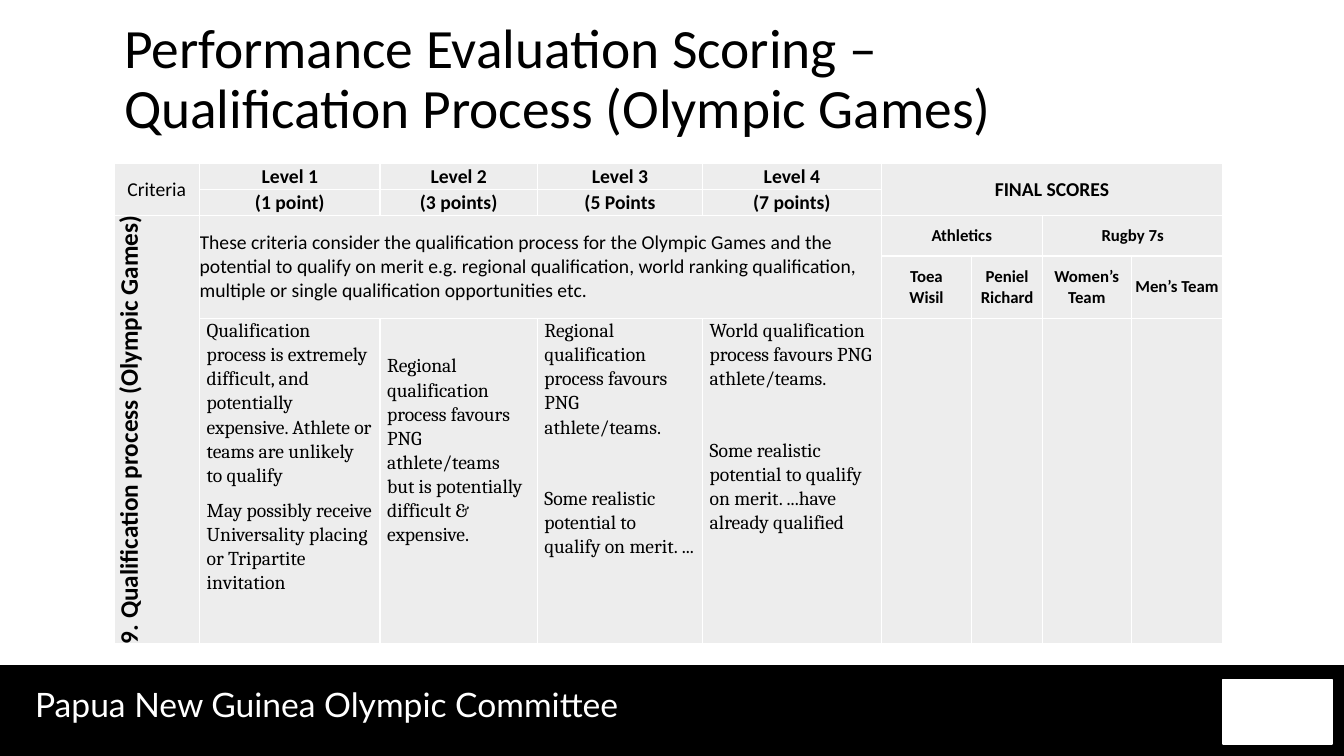
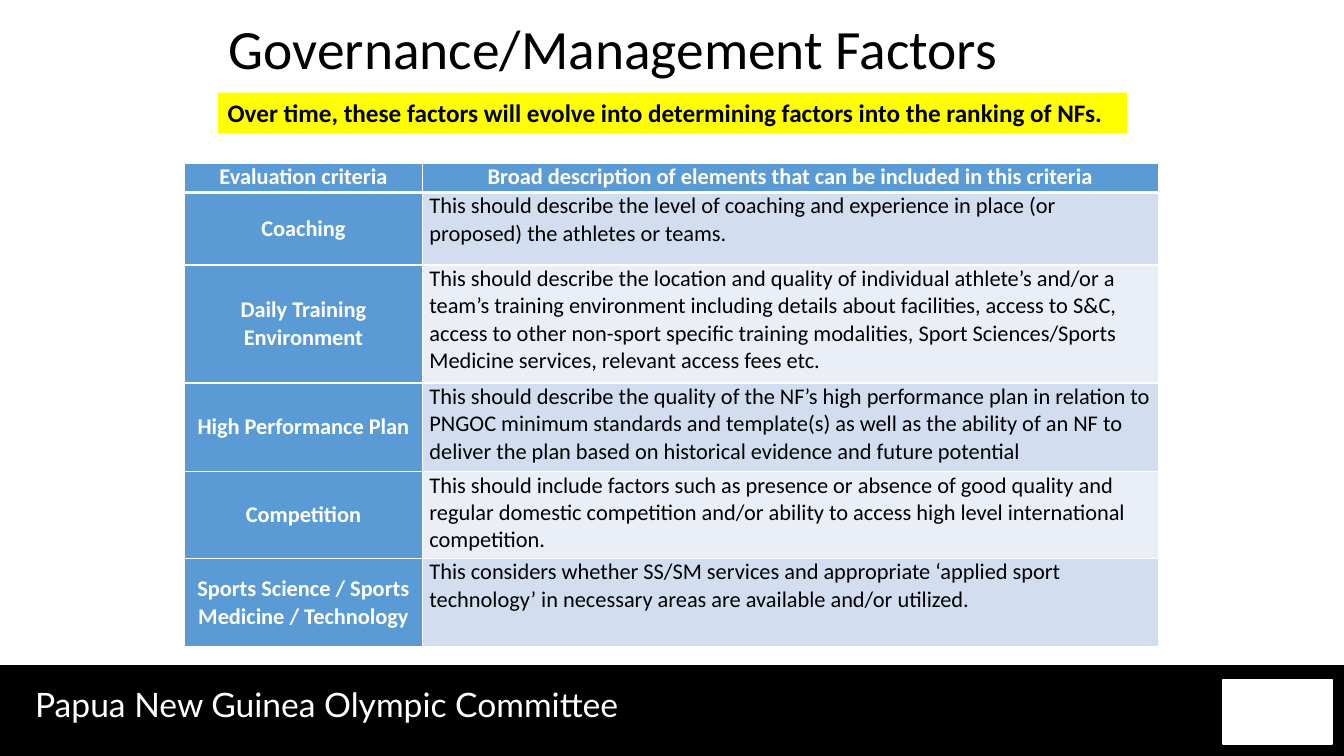
from lxml import etree
from pptx import Presentation
from pptx.dml.color import RGBColor
from pptx.enum import shapes, text
from pptx.oxml.ns import qn
from pptx.util import Inches, Pt

COLOURS = {
    "black": "000000", "white": "FFFFFF", "grey": "EDEDED", "yellow": "FFFF00",
    "blue": "5B9BD5", "band": "D2DEEF", "light band": "EAEFF7",
}
CENTRE, LEFT = text.PP_ALIGN.CENTER, text.PP_ALIGN.LEFT
MIDDLE, TOP = text.MSO_ANCHOR.MIDDLE, text.MSO_ANCHOR.TOP
TITLE_ONLY = 5
TABLE_TOP = 1.62

SCORE_COLUMNS = [0.85, 1.79, 1.56, 1.64, 1.77, 0.9, 0.7, 0.88, 0.91]
SCORE_ROWS = [0.26, 0.26, 0.4, 0.62, 3.22]
# Heading, points, paragraphs, top margin in inches, gap between paragraphs in points
LEVELS = [
    ("Level 1", "(1 point)",
     ["Qualification process is extremely difficult, and potentially expensive. "
      "Athlete or teams are unlikely to qualify",
      "May possibly receive Universality placing or Tripartite invitation"], 0, 8),
    ("Level 2", "(3 points)",
     ["Regional qualification process favours PNG athlete/teams but is "
      "potentially difficult & expensive."], 0.35, 0),
    ("Level 3", "(5 Points",
     ["Regional qualification process favours PNG athlete/teams.",
      "Some realistic potential to qualify on merit. ..."], 0, 34),
    ("Level 4", "(7 points)",
     ["World qualification process favours PNG athlete/teams.",
      "Some realistic potential to qualify on merit. ...have already qualified"], 0, 34),
]
CONSIDERATION = (
    "These criteria consider the qualification process for the Olympic Games and the "
    "potential to qualify on merit e.g. regional qualification, world ranking "
    "qualification, multiple or single qualification opportunities etc.")
ENTRANTS = [["Toea", "Wisil"], ["Peniel", "Richard"], ["Women’s Team"], ["Men’s Team"]]

FACTOR_COLUMNS = [2.36, 7.3]
FACTOR_ROWS = [0.29, 0.72, 1.17, 0.88, 0.86, 0.88]
FACTOR_HEADINGS = ["Evaluation criteria",
                   "Broad description of elements that can be included in this criteria"]
FACTORS = [
    ("Coaching",
     "This should describe the level of coaching and experience in place (or proposed) "
     "the athletes or teams."),
    ("Daily Training Environment",
     "This should describe the location and quality of individual athlete’s and/or a "
     "team’s training environment including details about facilities, access to S&C, "
     "access to other non-sport specific training modalities, Sport Sciences/Sports "
     "Medicine services, relevant access fees etc."),
    ("High Performance Plan",
     "This should describe the quality of the NF’s high performance plan in relation to "
     "PNGOC minimum standards and template(s) as well as the ability of an NF to deliver "
     "the plan based on historical evidence and future potential"),
    ("Competition",
     "This should include factors such as presence or absence of good quality and regular "
     "domestic competition and/or ability to access high level international competition."),
    ("Sports Science / Sports Medicine / Technology",
     "This considers whether SS/SM services and appropriate ‘applied sport technology’ in "
     "necessary areas are available and/or utilized."),
]


def colour(name):
    return RGBColor.from_string(COLOURS[name])


def set_font(paragraph, size, name="Calibri", ink="black", bold=False):
    font = paragraph.font
    font.name, font.size, font.bold = name, Pt(size), bold
    font.color.rgb = colour(ink)


def place(shape, left, top, width, height):
    shape.left, shape.top = Inches(left), Inches(top)
    shape.width, shape.height = Inches(width), Inches(height)


def add_rectangle(slide, left, top, width, height, fill, outlined=True):
    shape = slide.shapes.add_shape(
        shapes.MSO_SHAPE.RECTANGLE, *map(Inches, (left, top, width, height)))
    shape.shadow.inherit = False
    shape.fill.solid()
    shape.fill.fore_color.rgb = colour(fill)
    if outlined:
        shape.line.color.rgb = colour(fill)
        shape.line.width = Pt(1)
    else:
        shape.line.fill.background()
    return shape


def add_footer(slide):
    """Draw the footer and hand it to the layout, so that every slide shows it."""
    band = add_rectangle(slide, 0, 6.6, 13.33, 0.9, "black")
    label = slide.shapes.add_textbox(*map(Inches, (0.25, 6.74, 6.55, 0.5)))
    label.text_frame.word_wrap = True
    label.text_frame.text = "Papua New Guinea Olympic Committee"
    set_font(label.text_frame.paragraphs[0], 24, "Lato", "white")
    emblem = add_rectangle(slide, 12.13, 6.74, 1.08, 0.64, "white")
    for number, shape in enumerate((band, label, emblem), start=101):
        shape.element.xpath(".//p:cNvPr")[0].set("id", str(number))
        slide.slide_layout.shapes.element.append(shape.element)


def add_title(slide, wording, left, top, width, height):
    title = slide.shapes.title
    place(title, left, top, width, height)
    frame = title.text_frame
    frame.text = wording
    frame.word_wrap = True
    frame.auto_size = text.MSO_AUTO_SIZE.NONE
    frame.vertical_anchor = MIDDLE
    paragraph = frame.paragraphs[0]
    paragraph.alignment, paragraph.line_spacing = LEFT, 0.9
    set_font(paragraph, 39.6)


def set_borders(cell, bottom=1):
    properties = cell._tc.get_or_add_tcPr()
    for side, points in (("L", 1), ("R", 1), ("T", 1), ("B", bottom)):
        line = etree.SubElement(properties, qn(f"a:ln{side}"), w=str(Pt(points)))
        solid = etree.SubElement(line, qn("a:solidFill"))
        etree.SubElement(solid, qn("a:srgbClr"), val=COLOURS["white"])


def add_table(slide, left, widths, heights, fill, side_margin):
    """Add a table whose cells share borders, fill and margins."""
    table = slide.shapes.add_table(
        len(heights), len(widths), Inches(left), Inches(TABLE_TOP),
        Inches(sum(widths)), Inches(sum(heights))).table
    table.first_row = table.horz_banding = False
    for column, width in zip(table.columns, widths):
        column.width = Inches(width)
    for row, height in zip(table.rows, heights):
        row.height = Inches(height)
    for cell in table.iter_cells():
        set_borders(cell)
        fill_cell(cell, fill)
        cell.margin_top = cell.margin_bottom = 0
        cell.margin_left = cell.margin_right = Inches(side_margin)
    return table


def fill_cell(cell, fill):
    cell.fill.solid()
    cell.fill.fore_color.rgb = colour(fill)


def write_cell(cell, lines, size, align=CENTRE, anchor=MIDDLE, gap=0, spacing=None, **font):
    cell.vertical_anchor = anchor
    cell.text_frame.text = "\n".join(lines)
    for index, paragraph in enumerate(cell.text_frame.paragraphs):
        paragraph.alignment = align
        if spacing:
            paragraph.line_spacing = spacing
        if index and gap:
            paragraph.space_before = Pt(gap)
        set_font(paragraph, size, **font)


def build_scoring(slide):
    add_title(slide, "Performance Evaluation Scoring –\vQualification Process (Olympic Games)",
              1.13, 0.15, 10, 1.3)
    table = add_table(slide, 1.13, SCORE_COLUMNS, SCORE_ROWS, "grey", 0)
    for first, last in [((0, 0), (1, 0)), ((0, 5), (1, 8)), ((2, 0), (4, 0)),
                        ((2, 1), (3, 4)), ((2, 5), (2, 6)), ((2, 7), (2, 8))]:
        table.cell(*first).merge(table.cell(*last))

    # Criteria column and headings
    write_cell(table.cell(0, 0), ["Criteria"], 14)
    criterion = table.cell(2, 0)
    write_cell(criterion, ["9. Qualification process (Olympic Games)"], 18, bold=True)
    criterion._tc.get_or_add_tcPr().set("vert", "vert270")
    write_cell(table.cell(2, 1), [CONSIDERATION], 14, LEFT)

    # Level columns
    for column, (heading, points, lines, top, gap) in enumerate(LEVELS, start=1):
        write_cell(table.cell(0, column), [heading], 14, bold=True)
        write_cell(table.cell(1, column), [points], 14, bold=True)
        cell = table.cell(4, column)
        cell.margin_left = cell.margin_right = Inches(0.07)
        cell.margin_top = Inches(top)
        write_cell(cell, lines, 14, LEFT, TOP, gap, 1.07, name="Cambria")

    # Score columns
    write_cell(table.cell(0, 5), ["FINAL SCORES"], 14, bold=True)
    for column, sport in ((5, "Athletics"), (7, "Rugby 7s")):
        write_cell(table.cell(2, column), [sport], 12, bold=True)
    for column, lines in enumerate(ENTRANTS, start=5):
        write_cell(table.cell(3, column), lines, 12, bold=True)


def build_factors(slide):
    add_title(slide, "Governance/Management Factors", 2.17, 0.15, 9, 0.72)
    table = add_table(slide, 1.83, FACTOR_COLUMNS, FACTOR_ROWS, "blue", 0.07)
    for column, heading in enumerate(FACTOR_HEADINGS):
        cell = table.cell(0, column)
        write_cell(cell, [heading], 16, anchor=TOP, ink="white", bold=True)
        cell._tc.tcPr.find(qn("a:lnB")).set("w", str(Pt(3)))
    for row, (factor, description) in enumerate(FACTORS, start=1):
        write_cell(table.cell(row, 0), [factor], 16, ink="white", bold=True)
        table.cell(row, 1)
        fill_cell(table.cell(row, 1), "band" if row % 2 else "light band")
        write_cell(table.cell(row, 1), [description], 16, LEFT, TOP)

    # Highlighted remark
    remark = add_rectangle(slide, 2.16, 0.92, 9.02, 0.4, "yellow", outlined=False)
    remark.text_frame.word_wrap = True
    remark.text_frame.vertical_anchor = TOP
    remark.text_frame.text = ("Over time, these factors will evolve into determining "
                              "factors into the ranking of NFs.")
    paragraph = remark.text_frame.paragraphs[0]
    paragraph.alignment = LEFT
    set_font(paragraph, 18, bold=True)


def main():
    presentation = Presentation()
    presentation.slide_width, presentation.slide_height = Inches(13.33), Inches(7.5)
    layout = presentation.slide_layouts[TITLE_ONLY]
    scoring, factors = (presentation.slides.add_slide(layout) for _ in range(2))
    add_footer(scoring)
    build_scoring(scoring)
    build_factors(factors)
    presentation.save("out.pptx")


if __name__ == "__main__":
    main()
